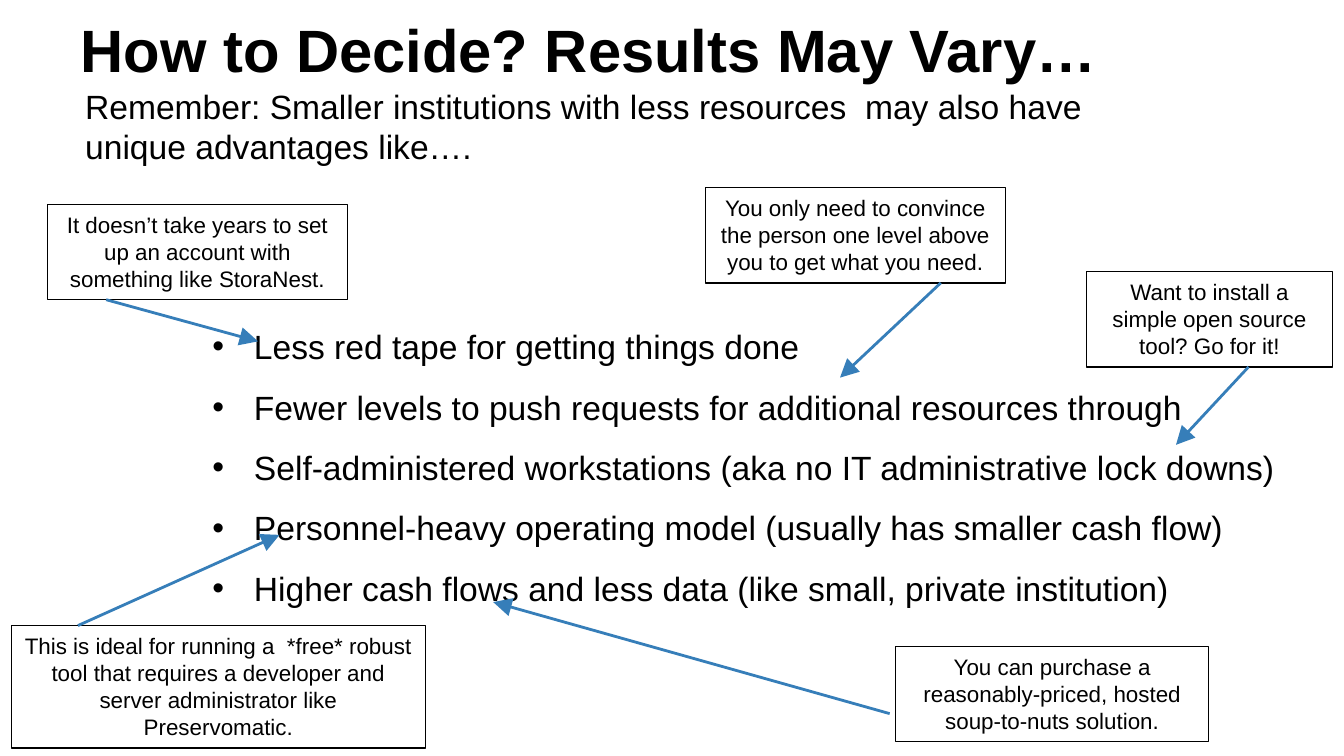
from lxml import etree
from pptx import Presentation
from pptx.dml.color import RGBColor
from pptx.enum import shapes, text
from pptx.oxml import ns
from pptx.util import Pt

PX = 4572  # EMU in one px, 200 px to the inch
COLORS = {"ink": "000000", "arrow": "367EB9"}
FONT = "Arial"

TITLE = "How to Decide? Results May Vary…"
INTRO = ("Remember: Smaller institutions with less resources  may also have "
         "unique advantages like….")
ADVANTAGES = [
    "Less red tape for getting things done",
    "Fewer levels to push requests for additional resources through",
    "Self-administered workstations (aka no IT administrative lock downs)",
    "Personnel-heavy operating model (usually has smaller cash flow)",
    "Higher cash flows and less data (like small, private institution)",
]
# Box, arrow start and arrow end (both measured from the box corner), wording
CALLOUTS = [
    ((71, 304, 446, 142), (87, 142), (313, 204),
     "It doesn’t take years to set up an account with something like StoraNest."),
    ((1050, 279, 446, 142), (350, 142), (200, 283),
     "You only need to convince the person one level above you to get what you need."),
    ((1617, 404, 366, 142), (241, 142), (133, 258),
     "Want to install a simple open source tool? Go for it!"),
    ((17, 931, 616, 182), (99, 0), (399, -135),
     "This is ideal for running a  *free* robust tool that requires a developer "
     "and server administrator like Preservomatic."),
    ((1333, 962, 466, 142), (-9, 100), (-599, -66),
     "You can purchase a reasonably-priced, hosted soup-to-nuts solution."),
]


def color(name):
    return RGBColor.from_string(COLORS[name])


def apply(target, **values):
    for name, value in values.items():
        setattr(target, name, value)


def place(shape, box):
    names = ("left", "top", "width", "height")
    apply(shape, **{name: length * PX for name, length in zip(names, box)})


def write(shape, lines, size, bold=False, anchor=text.MSO_ANCHOR.TOP,
          inset=10, **paragraph_format):
    frame = shape.text_frame
    apply(frame, word_wrap=True, auto_size=text.MSO_AUTO_SIZE.NONE,
          vertical_anchor=anchor, margin_left=20 * PX, margin_right=20 * PX,
          margin_top=inset * PX, margin_bottom=inset * PX)
    frame.text = "\n".join(lines)
    for paragraph in frame.paragraphs:
        apply(paragraph, **paragraph_format)
        apply(paragraph.font, name=FONT, size=Pt(size), bold=bold)
        paragraph.font.color.rgb = color("ink")


def add_heading(slide, box):
    left, top, width, height = box
    # Title
    title = slide.shapes.title
    place(title, (left, top, width, 188))
    write(title, [TITLE], 32, bold=True, anchor=text.MSO_ANCHOR.BOTTOM,
          inset=20, alignment=text.PP_ALIGN.LEFT)
    # Introductory sentence
    intro = slide.shapes.add_textbox(0, 0, 0, 0)
    place(intro, (left + 7, top + 160, width - 124, height - 160))
    write(intro, [INTRO], 18)


def add_advantages(slide, box):
    body = slide.placeholders[1]
    place(body, box)
    write(body, ADVANTAGES, 18, line_spacing=1.5, space_before=Pt(0))
    # Bullets with a hanging indent
    for paragraph in body.text_frame.paragraphs:
        properties = paragraph._p.get_or_add_pPr()
        properties.set("marL", str(62 * PX))
        properties.set("indent", str(-62 * PX))
        etree.SubElement(properties, ns.qn("a:buChar"), char="•")


def add_callout(slide, box, start, end, wording):
    left, top = box[:2]
    # Framed note
    note = slide.shapes.add_shape(shapes.MSO_SHAPE.RECTANGLE, 0, 0, 0, 0)
    place(note, box)
    note.shadow.inherit = False
    note.fill.background()
    note.line.color.rgb = color("ink")
    note.line.width = Pt(0.75)
    write(note, [wording], 12, alignment=text.PP_ALIGN.CENTER)
    # Arrow to the matching advantage
    ends = [length * PX for x, y in (start, end) for length in (left + x, top + y)]
    arrow = slide.shapes.add_connector(shapes.MSO_CONNECTOR.STRAIGHT, *ends)
    arrow.line.color.rgb = color("arrow")
    arrow.line.width = Pt(1.5)
    etree.SubElement(arrow.line._get_or_add_ln(), ns.qn("a:tailEnd"),
                     type="triangle", w="lg", len="lg")
    etree.SubElement(arrow._element.spPr, ns.qn("a:effectLst"))


def main():
    presentation = Presentation()
    apply(presentation, slide_width=2000 * PX, slide_height=1125 * PX)
    slide = presentation.slides.add_slide(presentation.slide_layouts[1])
    add_heading(slide, (100, -42, 1800, 302))
    add_advantages(slide, (296, 445, 1638, 474))
    for callout in CALLOUTS:
        add_callout(slide, *callout)
    presentation.save("out.pptx")


if __name__ == "__main__":
    main()
